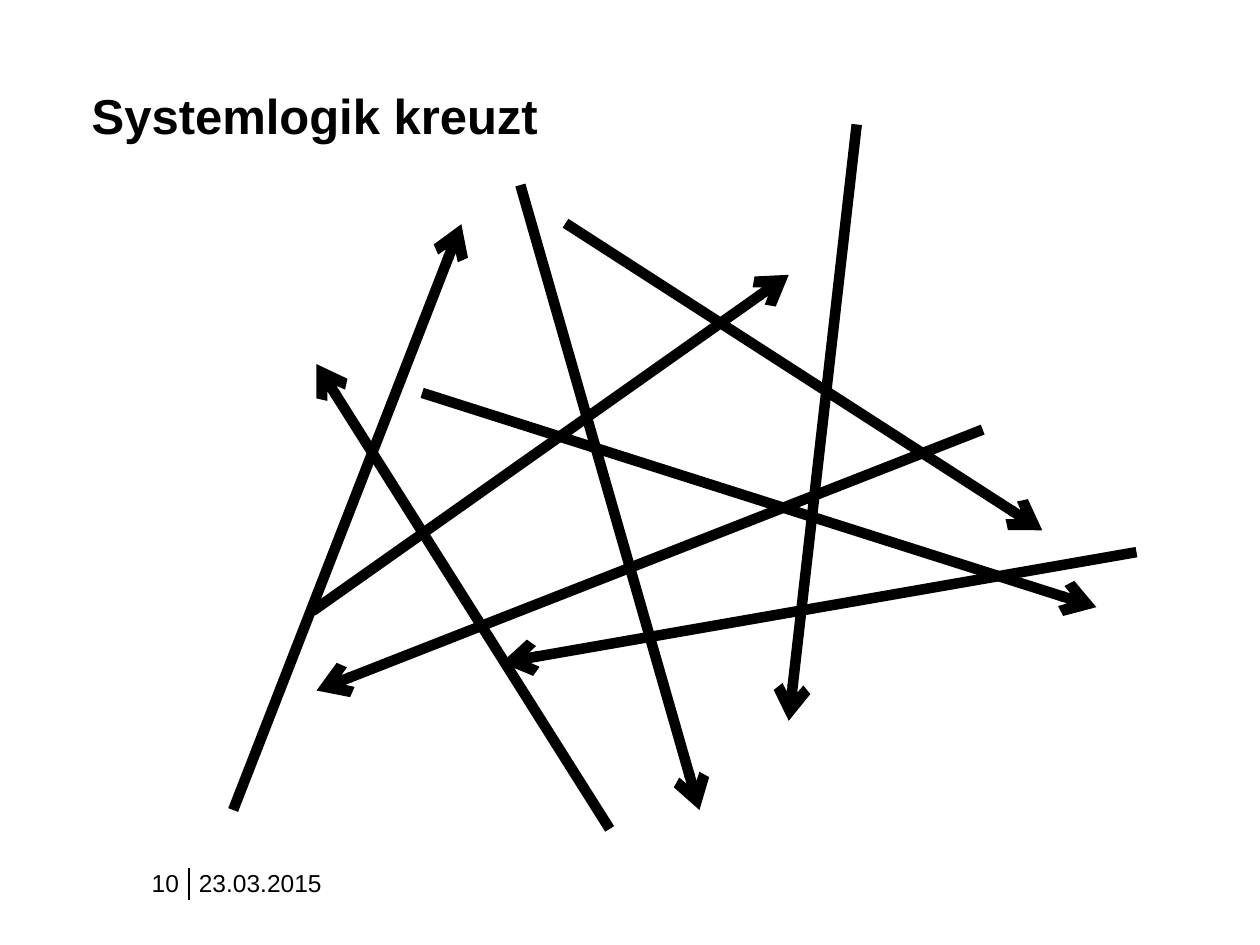
from lxml import etree
from pptx import Presentation
from pptx.dml.color import RGBColor
from pptx.enum.shapes import MSO_CONNECTOR
from pptx.enum.text import MSO_ANCHOR, PP_ALIGN
from pptx.oxml.ns import qn
from pptx.util import Cm, Pt

STRAIGHT = MSO_CONNECTOR.STRAIGHT
TOP = MSO_ANCHOR.TOP
LEFT, RIGHT = PP_ALIGN.LEFT, PP_ALIGN.RIGHT

FONT = "Arial"
COLORS = {"ink": "000000", "background": "FFFFFF"}
FOOTER_TOP = 17.5

CROSSING_ARROWS = [
    ((6.3, 12.32), (15.9, 5.54)),
    ((4.7, 16.33), (9.3, 4.52)),
    ((8.51, 7.92), (22.1, 12.24)),
    ((22.91, 11.13), (10.11, 13.36)),
    ((19.81, 8.66), (6.38, 13.92)),
    ((12.29, 16.71), (6.38, 7.34)),
    ((11.4, 4.5), (21.01, 10.69)),
    ((10.49, 3.73), (14.1, 16.33)),
    ((17.27, 2.51), (15.9, 14.53)),
]


def color(name):
    """Return the named colour."""
    return RGBColor.from_string(COLORS[name])


def add_text(s, text, left, top, width, height, size, bold=False, align=LEFT, spacing=None):
    """Add a one-paragraph text box without margins."""
    tf = s.shapes.add_textbox(Cm(left), Cm(top), Cm(width), Cm(height)).text_frame
    tf.word_wrap = True
    tf.vertical_anchor = TOP
    tf.margin_left = tf.margin_right = tf.margin_top = tf.margin_bottom = 0
    tf.text = text
    p = tf.paragraphs[0]
    p.alignment = align
    if spacing:
        p.line_spacing = Pt(spacing)
    font = p.runs[0].font
    font.name, font.size, font.bold = FONT, Pt(size), bold
    font.color.rgb = color("ink")


def add_line(s, start, end, width):
    """Add a straight line without shadow and return it."""
    points = [Cm(value) for value in (*start, *end)]
    line = s.shapes.add_connector(STRAIGHT, *points)
    line.line.color.rgb = color("ink")
    line.line.width = Pt(width)
    etree.SubElement(line._element.spPr, qn("a:effectLst"))
    return line


def add_arrow(s, start, end):
    """Add a thick line with an open arrowhead at its end."""
    ln = add_line(s, start, end, 6).line._get_or_add_ln()
    etree.SubElement(ln, qn("a:tailEnd"), type="arrow")


def add_footer(s, number, date):
    """Add the slide number and date on either side of a thin divider."""
    add_line(s, (3.81, FOOTER_TOP), (3.81, 18.14), 1)
    add_text(s, date, 4.01, FOOTER_TOP, 5.28, 1.27, 14)
    add_text(s, number, 0.43, FOOTER_TOP, 3.18, 1.27, 14, align=RIGHT)


def main():
    """Build the slide and save it."""
    prs = Presentation()
    prs.slide_width, prs.slide_height = Cm(25.4), Cm(19.05)
    s = prs.slides.add_slide(prs.slide_layouts[6])
    s.background.fill.solid()
    s.background.fill.fore_color.rgb = color("background")
    add_text(s, "Systemlogik kreuzt", 1.85, 1.65, 18.26, 3.63, 28, bold=True, spacing=36)
    add_footer(s, "10", "23.03.2015")
    for start, end in CROSSING_ARROWS:
        add_arrow(s, start, end)
    prs.save("out.pptx")


if __name__ == "__main__":
    main()
